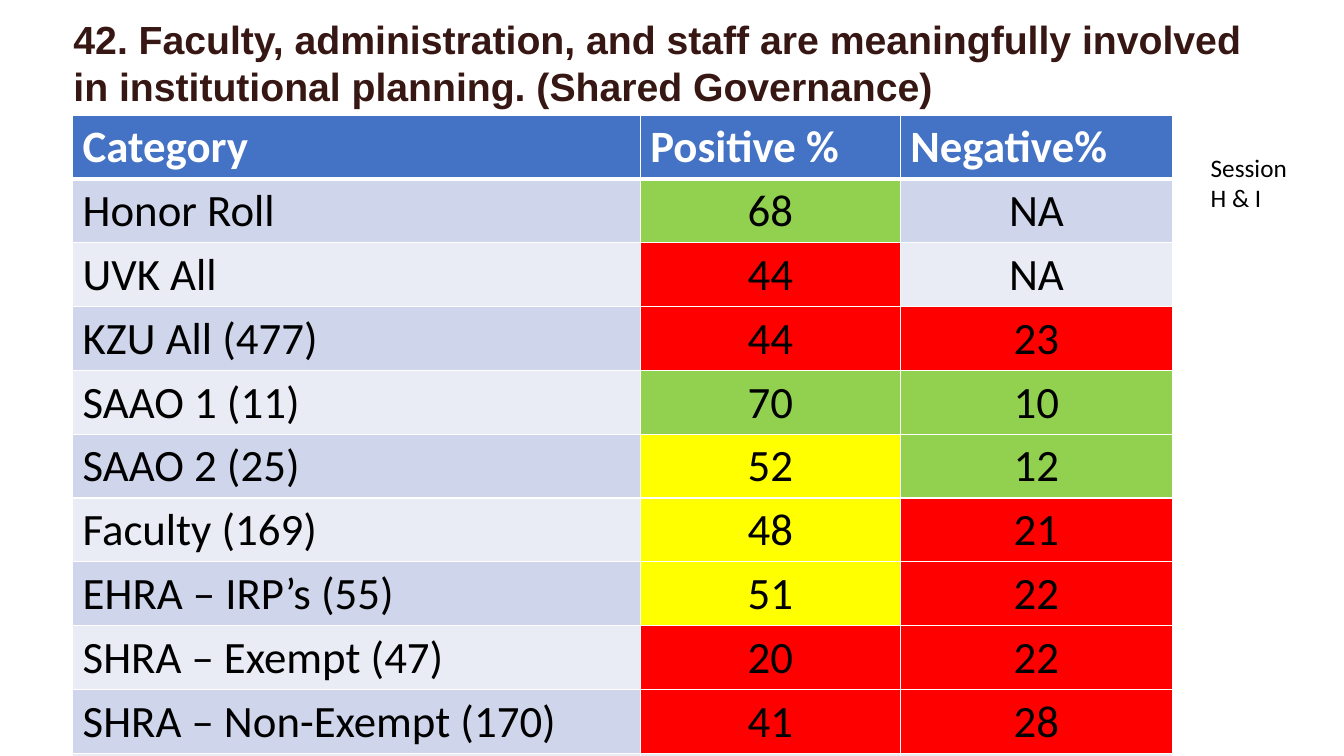
from dataclasses import dataclass

from lxml import etree
from pptx import Presentation
from pptx import util as u
from pptx.dml.color import RGBColor
from pptx.enum import text
from pptx.oxml import ns

WHITE, BLACK, BROWN = "FFFFFF", "000000", "371713"
HEADER, BANDS = "4472C4", ("CFD5EA", "E9EBF5")
GREEN, YELLOW, RED = "92D050", "FFFF00", "FF0000"


@dataclass(frozen=True)
class Style:
    size: float
    color: str
    bold: bool = False
    font: str = "Calibri"


@dataclass(frozen=True)
class Score:
    value: str
    rating: str | None = None


@dataclass(frozen=True)
class Group:
    category: str
    positive: Score
    negative: Score


@dataclass(frozen=True)
class Caption:
    wording: str
    left: float
    top: float
    width: float
    height: float
    style: Style


HEADINGS = ("Category", "Positive %", "Negative%")
COLUMN_WIDTHS = (5.63, 2.58, 2.7)
ROW_HEIGHT = 0.53
BOTTOM_MARGIN = 0.04
HEADING_STYLE = Style(32, WHITE, bold=True)
BODY_STYLE = Style(32, BLACK)

GROUPS = (
    Group("Honor Roll", Score("68", GREEN), Score("NA")),
    Group("UVK All", Score("44", RED), Score("NA")),
    Group("KZU All (477)", Score("44", RED), Score("23", RED)),
    Group("SAAO 1 (11)", Score("70", GREEN), Score("10", GREEN)),
    Group("SAAO 2 (25)", Score("52", YELLOW), Score("12", GREEN)),
    Group("Faculty (169)", Score("48", YELLOW), Score("21", RED)),
    Group("EHRA – IRP’s (55)", Score("51", YELLOW), Score("22", RED)),
    Group("SHRA – Exempt (47)", Score("20", RED), Score("22", RED)),
    Group("SHRA – Non-Exempt (170)", Score("41", RED), Score("28", RED)),
    Group("", Score(""), Score("")),
)

CAPTIONS = (
    Caption(
        "42. Faculty, administration, and staff are meaningfully involved "
        "in institutional planning. (Shared Governance)",
        0.63, 0.1, 11.88, 1.04, Style(28, BROWN, bold=True, font="Arial"),
    ),
    Caption("Session H & I", 11.91, 1.46, 1.1, 0.71, Style(18, BLACK)),
)


def rgb(value: str) -> RGBColor:
    return RGBColor.from_string(value)


def add_run(paragraph, wording: str, style: Style) -> None:
    run = paragraph.add_run()
    run.text = wording
    run.font.size = u.Pt(style.size)
    run.font.name = style.font
    run.font.bold = style.bold
    run.font.color.rgb = rgb(style.color)


def add_borders(cell, bottom: float) -> None:
    properties = cell._tc.get_or_add_tcPr()
    for side, width in (("L", 1), ("R", 1), ("T", 1), ("B", bottom)):
        line = etree.SubElement(properties, ns.qn(f"a:ln{side}"), w=str(u.Pt(width)))
        fill = etree.SubElement(line, ns.qn("a:solidFill"))
        etree.SubElement(fill, ns.qn("a:srgbClr"), val=WHITE)


def fill_cell(cell, wording: str, fill: str, style: Style,
              centred: bool = False, bottom: float = 1) -> None:
    add_borders(cell, bottom)
    cell.margin_bottom = u.Inches(BOTTOM_MARGIN)
    cell.fill.solid()
    cell.fill.fore_color.rgb = rgb(fill)
    paragraph = cell.text_frame.paragraphs[0]
    if centred:
        paragraph.alignment = text.PP_ALIGN.CENTER
    if wording:
        add_run(paragraph, wording, style)


def add_survey(slide) -> None:
    row_count = len(GROUPS) + 1
    survey = slide.shapes.add_table(
        row_count, len(HEADINGS), u.Inches(0.72), u.Inches(1.14),
        u.Inches(sum(COLUMN_WIDTHS)), u.Inches(ROW_HEIGHT * row_count),
    ).table
    for column, width in zip(survey.columns, COLUMN_WIDTHS):
        column.width = u.Inches(width)
    for row in survey.rows:
        row.height = u.Inches(ROW_HEIGHT)
    for index, heading in enumerate(HEADINGS):
        fill_cell(survey.cell(0, index), heading, HEADER, HEADING_STYLE, bottom=3)
    for row, group in enumerate(GROUPS, start=1):
        band = BANDS[(row - 1) % 2]
        fill_cell(survey.cell(row, 0), group.category, band, BODY_STYLE)
        for column, score in enumerate((group.positive, group.negative), start=1):
            fill_cell(survey.cell(row, column), score.value,
                      score.rating or band, BODY_STYLE, centred=True)


def add_caption(slide, caption: Caption) -> None:
    box = slide.shapes.add_textbox(
        u.Inches(caption.left), u.Inches(caption.top),
        u.Inches(caption.width), u.Inches(caption.height),
    )
    frame = box.text_frame
    frame.word_wrap = True
    frame.auto_size = text.MSO_AUTO_SIZE.SHAPE_TO_FIT_TEXT
    add_run(frame.paragraphs[0], caption.wording, caption.style)


def main() -> None:
    deck = Presentation()
    deck.slide_width, deck.slide_height = u.Inches(13.33), u.Inches(7.5)
    slide = deck.slides.add_slide(deck.slide_layouts[6])
    add_survey(slide)
    for caption in CAPTIONS:
        add_caption(slide, caption)
    deck.save("out.pptx")


if __name__ == "__main__":
    main()
